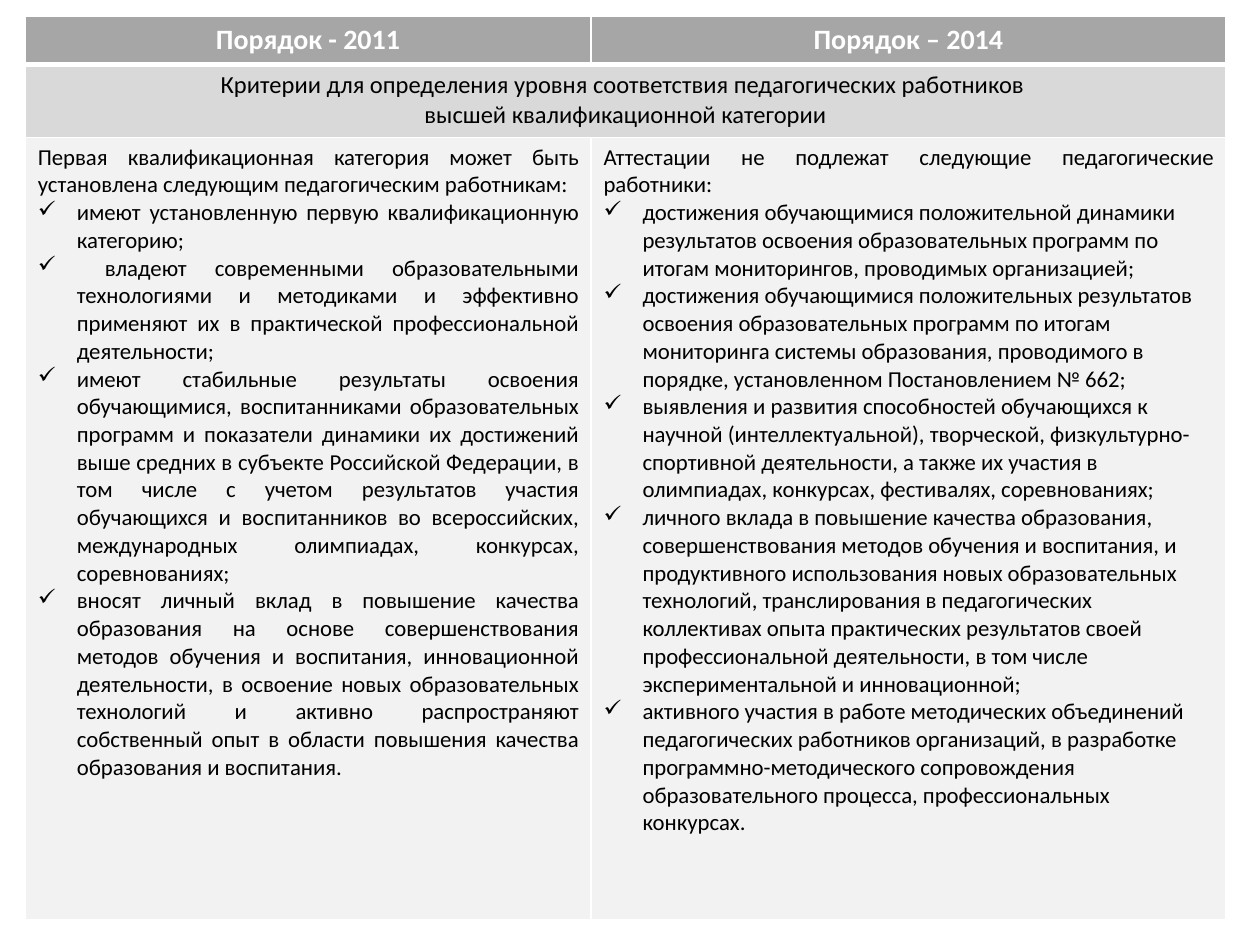
from dataclasses import dataclass

from lxml import etree
from pptx import Presentation
from pptx.dml.color import RGBColor
from pptx.enum.text import PP_ALIGN
from pptx.oxml.ns import qn
from pptx.util import Inches, Pt

LEFT, MID, JUST = PP_ALIGN.LEFT, PP_ALIGN.CENTER, PP_ALIGN.JUSTIFY
BLANK = 6
WIDE, HIGH = Inches(10), Inches(7.5)
COLS = (4.49, 5.04)
ROWS = (0.38, 0.58, 6.21)


@dataclass(frozen=True)
class Theme:
    font: str = "Calibri"
    head: str = "A6A6A6"
    band: str = "D9D9D9"
    body: str = "F2F2F2"
    ink: str = "000000"
    white: str = "FFFFFF"
    head_size: float = 16
    band_size: float = 14
    body_size: float = 13
    rule: float = 1
    thick: float = 3
    hang: float = 0.31


@dataclass(frozen=True)
class Look:
    fill: str
    ink: str
    size: float
    bold: bool = False
    top: float = 1
    base: float = 1


@dataclass(frozen=True)
class Line:
    text: str
    align: PP_ALIGN
    tick: bool = False


THEME = Theme()
HEAD = Look(THEME.head, THEME.white, THEME.head_size, True, base=THEME.thick)
BAND = Look(THEME.band, THEME.ink, THEME.band_size, top=THEME.thick)
BODY = Look(THEME.body, THEME.ink, THEME.body_size)

HEADS = ("Порядок - 2011", "Порядок – 2014")
TOPIC = (
    "Критерии для определения уровня соответствия педагогических работников ",
    "высшей квалификационной категории",
)
OLD_LEAD = "Первая квалификационная категория может быть установлена следующим педагогическим работникам:"
OLD = (
    "имеют установленную первую квалификационную категорию;",
    " владеют современными образовательными технологиями и методиками и эффективно "
    "применяют их в практической профессиональной деятельности;",
    "имеют стабильные результаты освоения обучающимися, воспитанниками образовательных "
    "программ и показатели динамики их достижений выше средних в субъекте Российской "
    "Федерации, в том числе с учетом результатов участия обучающихся и воспитанников во "
    "всероссийских, международных олимпиадах, конкурсах, соревнованиях;",
    "вносят личный вклад в повышение качества образования на основе совершенствования "
    "методов обучения и воспитания, инновационной деятельности, в освоение новых "
    "образовательных технологий и активно распространяют собственный опыт в области "
    "повышения качества образования и воспитания.",
)
NEW_LEAD = "Аттестации не подлежат следующие педагогические работники:"
NEW = (
    "достижения обучающимися положительной динамики результатов освоения образовательных "
    "программ по итогам мониторингов, проводимых организацией;",
    "достижения обучающимися положительных результатов освоения образовательных программ "
    "по итогам мониторинга системы образования, проводимого в порядке, установленном "
    "Постановлением № 662;",
    "выявления и развития способностей обучающихся к научной (интеллектуальной), "
    "творческой, физкультурно-спортивной деятельности, а также их участия в олимпиадах, "
    "конкурсах, фестивалях, соревнованиях;",
    "личного вклада в повышение качества образования, совершенствования методов обучения "
    "и воспитания, и продуктивного использования новых образовательных технологий, "
    "транслирования в педагогических коллективах опыта практических результатов своей "
    "профессиональной деятельности, в том числе экспериментальной и инновационной;",
    "активного участия в работе методических объединений педагогических работников "
    "организаций, в разработке программно-методического сопровождения образовательного "
    "процесса, профессиональных конкурсах.",
)


def rule(cell, look: Look) -> None:
    """Draw the white borders of a cell."""
    props = cell._tc.get_or_add_tcPr()
    edges = {"lnL": THEME.rule, "lnR": THEME.rule, "lnT": look.top, "lnB": look.base}
    for tag, width in edges.items():
        edge = etree.SubElement(props, qn(f"a:{tag}"), w=str(Pt(width)))
        fill = etree.SubElement(edge, qn("a:solidFill"))
        etree.SubElement(fill, qn("a:srgbClr"), val=THEME.white)


def tick(para) -> None:
    """Give a paragraph a hanging check mark."""
    props = para._p.get_or_add_pPr()
    hang = Inches(THEME.hang)
    props.set("marL", str(hang))
    props.set("indent", str(-hang))
    etree.SubElement(props, qn("a:buChar"), char="✓")


def write(cell, lines: list[Line], look: Look) -> None:
    frame = cell.text_frame
    frame.text = "\n".join(line.text for line in lines)
    for para, line in zip(frame.paragraphs, lines):
        para.alignment = line.align
        if line.tick:
            tick(para)
        for run in para.runs:
            font = run.font
            font.name, font.size, font.bold = THEME.font, Pt(look.size), look.bold
            font.color.rgb = RGBColor.from_string(look.ink)


def paint(cell, look: Look) -> None:
    rule(cell, look)
    cell.fill.solid()
    cell.fill.fore_color.rgb = RGBColor.from_string(look.fill)


def listing(lead: str, items: tuple[str, ...], align: PP_ALIGN) -> list[Line]:
    return [Line(lead, JUST)] + [Line(item, align, True) for item in items]


def main() -> None:
    deck = Presentation()
    deck.slide_width, deck.slide_height = WIDE, HIGH
    slide = deck.slides.add_slide(deck.slide_layouts[BLANK])
    grid = slide.shapes.add_table(
        len(ROWS), len(COLS), Inches(0.2), Inches(0.13),
        Inches(sum(COLS)), Inches(sum(ROWS)),
    ).table
    for col, width in zip(grid.columns, COLS):
        col.width = Inches(width)
    for row, height, look in zip(grid.rows, ROWS, (HEAD, BAND, BODY)):
        row.height = Inches(height)
        for cell in row.cells:
            paint(cell, look)

    grid.cell(1, 0).merge(grid.cell(1, 1))
    for col, text in enumerate(HEADS):
        write(grid.cell(0, col), [Line(text, MID)], HEAD)
    write(grid.cell(1, 0), [Line(text, MID) for text in TOPIC], BAND)
    write(grid.cell(2, 0), listing(OLD_LEAD, OLD, JUST), BODY)
    write(grid.cell(2, 1), listing(NEW_LEAD, NEW, LEFT), BODY)
    deck.save("out.pptx")


if __name__ == "__main__":
    main()
